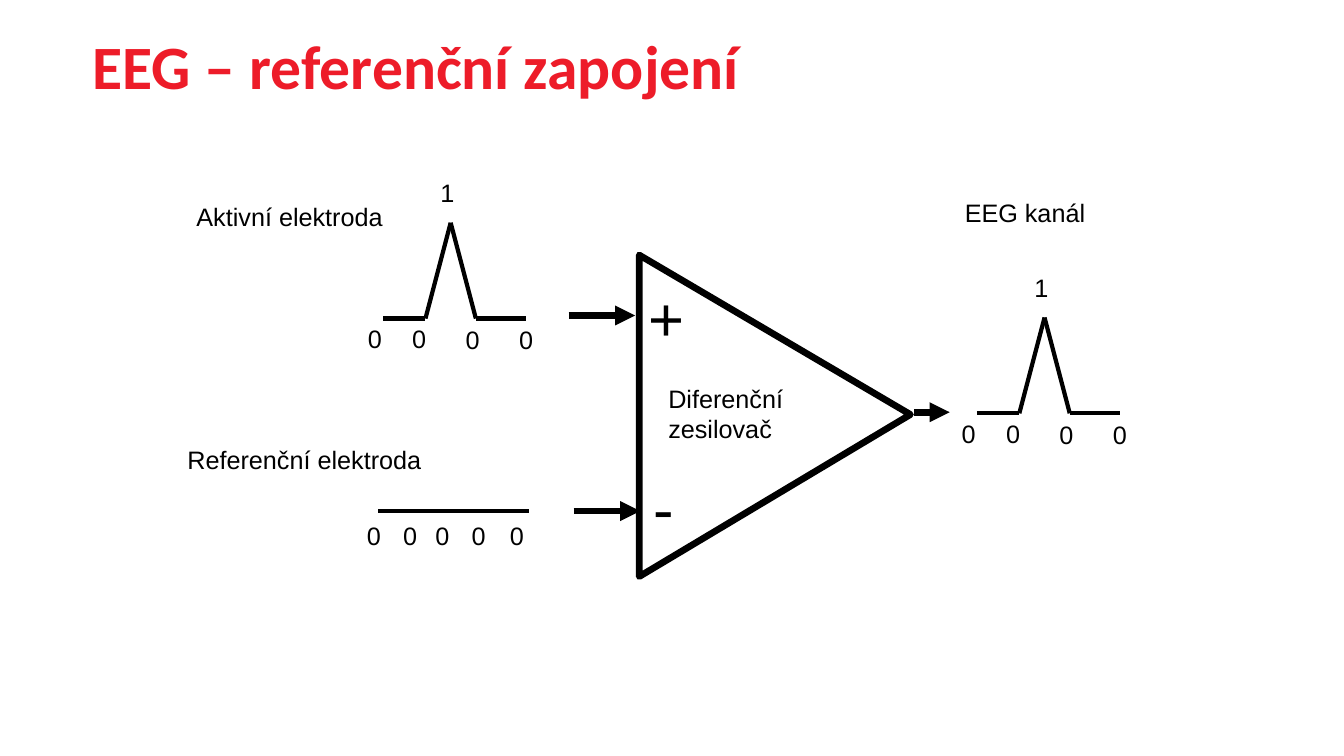
from dataclasses import dataclass
from itertools import pairwise

from lxml.etree import SubElement
from pptx import Presentation
from pptx.dml.color import RGBColor
from pptx.enum.shapes import MSO_CONNECTOR, MSO_SHAPE
from pptx.enum.text import MSO_AUTO_SIZE
from pptx.oxml.ns import qn
from pptx.util import Emu, Pt

PX = 9144  # 100 px to the inch
RED = RGBColor(0xED, 0x1C, 0x29)
BLACK = RGBColor(0, 0, 0)
THIN, THICK = 3, 4.75


@dataclass
class Label:
    text: str
    x: int
    y: int
    w: int
    h: int = 40
    size: int = 18
    font: str = "Arial"
    color: RGBColor = BLACK
    bold: bool = False
    wrap: bool = True


@dataclass
class Trace:
    """Polyline and its digits, placed relative to the trace's start."""
    x: int
    y: int
    points: list[tuple[int, int]]
    digits: list[tuple[str, int, int]]


@dataclass
class Arrow:
    x1: int
    x2: int
    y: int


def px(n: int) -> Emu:
    return Emu(n * PX)


def add_label(shapes, label: Label) -> None:
    sp = shapes.add_textbox(px(label.x), px(label.y), px(label.w), px(label.h))
    tf = sp.text_frame
    tf.word_wrap = label.wrap
    tf.auto_size = MSO_AUTO_SIZE.SHAPE_TO_FIT_TEXT
    tf.text = label.text
    font = tf.paragraphs[0].runs[0].font
    font.name, font.size, font.bold = label.font, Pt(label.size), label.bold
    font.color.rgb = label.color


def add_line(shapes, start: tuple[int, int], end: tuple[int, int],
             width: float, arrow: bool = False) -> None:
    c = shapes.add_connector(MSO_CONNECTOR.STRAIGHT, *map(px, start + end))
    c.line.color.rgb = BLACK
    c.line.width = Pt(width)
    if arrow:
        SubElement(c.line._ln, qn("a:tailEnd"), type="triangle")
    SubElement(c._element.spPr, qn("a:effectLst"))


def add_trace(shapes, trace: Trace) -> None:
    group = shapes.add_group_shape().shapes
    points = [(trace.x + dx, trace.y + dy) for dx, dy in trace.points]
    for start, end in pairwise(points):
        add_line(group, start, end, THIN)
    for text, dx, dy in trace.digits:
        add_label(group, Label(text, trace.x + dx, trace.y + dy, 34, wrap=False))


def add_amplifier(shapes) -> None:
    sp = shapes.add_shape(MSO_SHAPE.ISOSCELES_TRIANGLE,
                          px(609), px(278), px(319), px(269))
    sp.adjustments[0] = 0.496
    sp.rotation = 90
    sp.shadow.inherit = False
    sp.fill.background()
    sp.line.color.rgb = BLACK
    sp.line.width = Pt(THICK)
    SubElement(sp.line._ln, qn("a:round"))


SPIKE = [(0, 0), (42, 0), (67, -95), (92, 0), (142, 0)]
SPIKE_DIGITS = [("1", 47, -145), ("0", -25, 0), ("0", 19, 0),
                ("0", 72, 1), ("0", 125, 1)]
FLAT = [(0, 0), (150, 0)]
FLAT_DIGITS = [("0", dx, 4) for dx in (-21, 15, 47, 83, 121)]

TRACES = [
    Trace(380, 316, SPIKE, SPIKE_DIGITS),  # active electrode
    Trace(375, 507, FLAT, FLAT_DIGITS),    # reference electrode
    Trace(969, 410, SPIKE, SPIKE_DIGITS),  # EEG channel
]
ARROWS = [Arrow(564, 630, 313), Arrow(569, 635, 507), Arrow(907, 942, 409)]
LABELS = [
    Label("EEG – referenční zapojení", 82, 23, 931, 84, 44, "Calibri", RED, True),
    Label("+", 633, 273, 56, 84, 44, wrap=False),
    Label("-", 638, 461, 41, 84, 44, wrap=False),
    Label("Aktivní elektroda", 185, 195, 211),
    Label("Referenční elektroda", 176, 436, 272),
    Label("EEG kanál", 947, 191, 241),
    Label("Diferenční zesilovač", 653, 375, 167, 71),
]


def main() -> None:
    prs = Presentation()
    prs.slide_width, prs.slide_height = px(1333), px(750)
    shapes = prs.slides.add_slide(prs.slide_layouts[6]).shapes

    # Amplifier with its inputs and output
    add_amplifier(shapes)
    for a in ARROWS:
        add_line(shapes, (a.x1, a.y), (a.x2, a.y), THICK, arrow=True)

    # Signals
    for trace in TRACES:
        add_trace(shapes, trace)

    # Title and captions
    for label in LABELS:
        add_label(shapes, label)

    prs.save("out.pptx")


if __name__ == "__main__":
    main()
